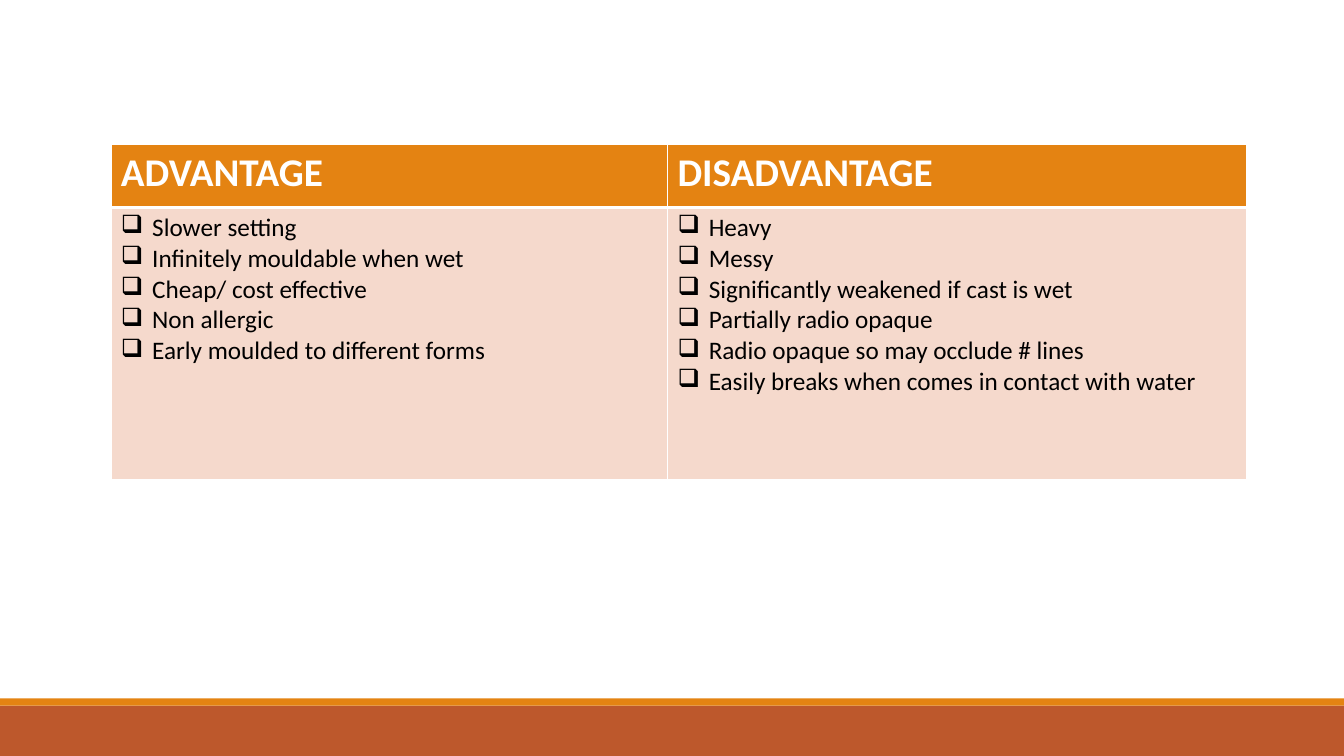
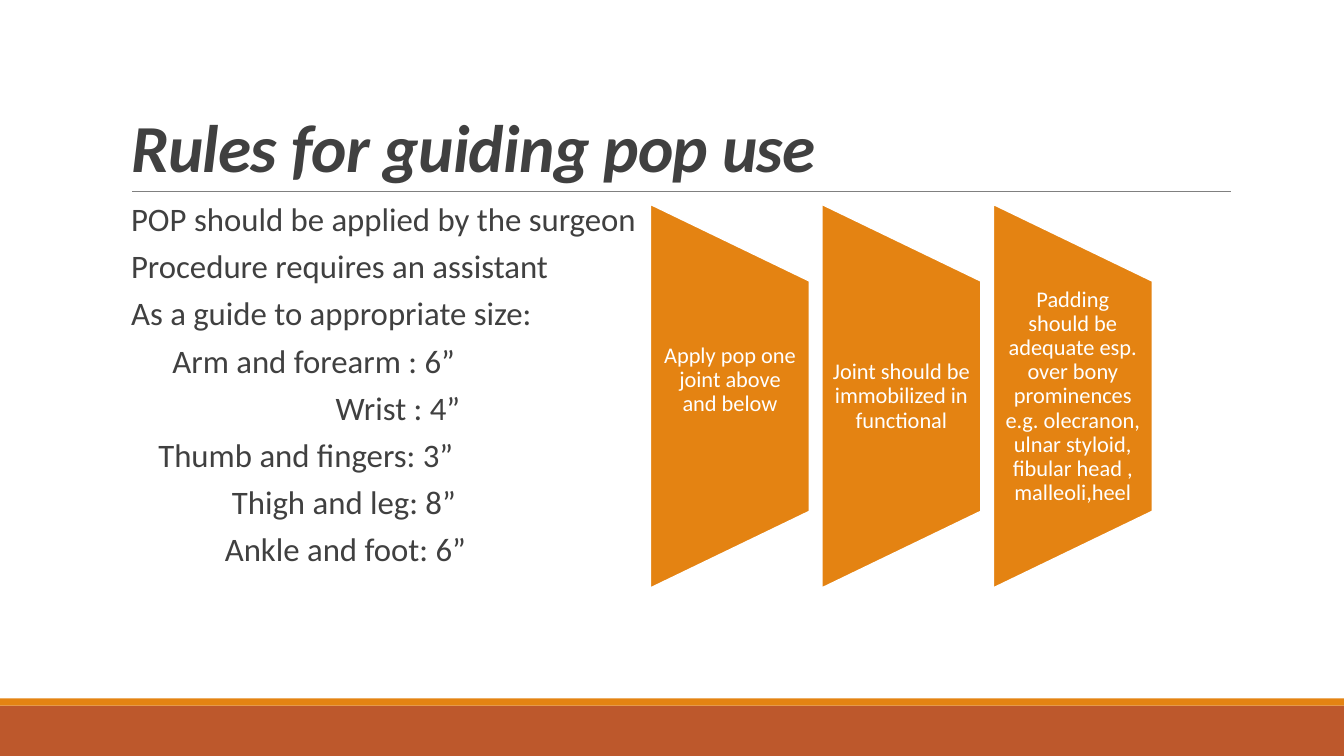
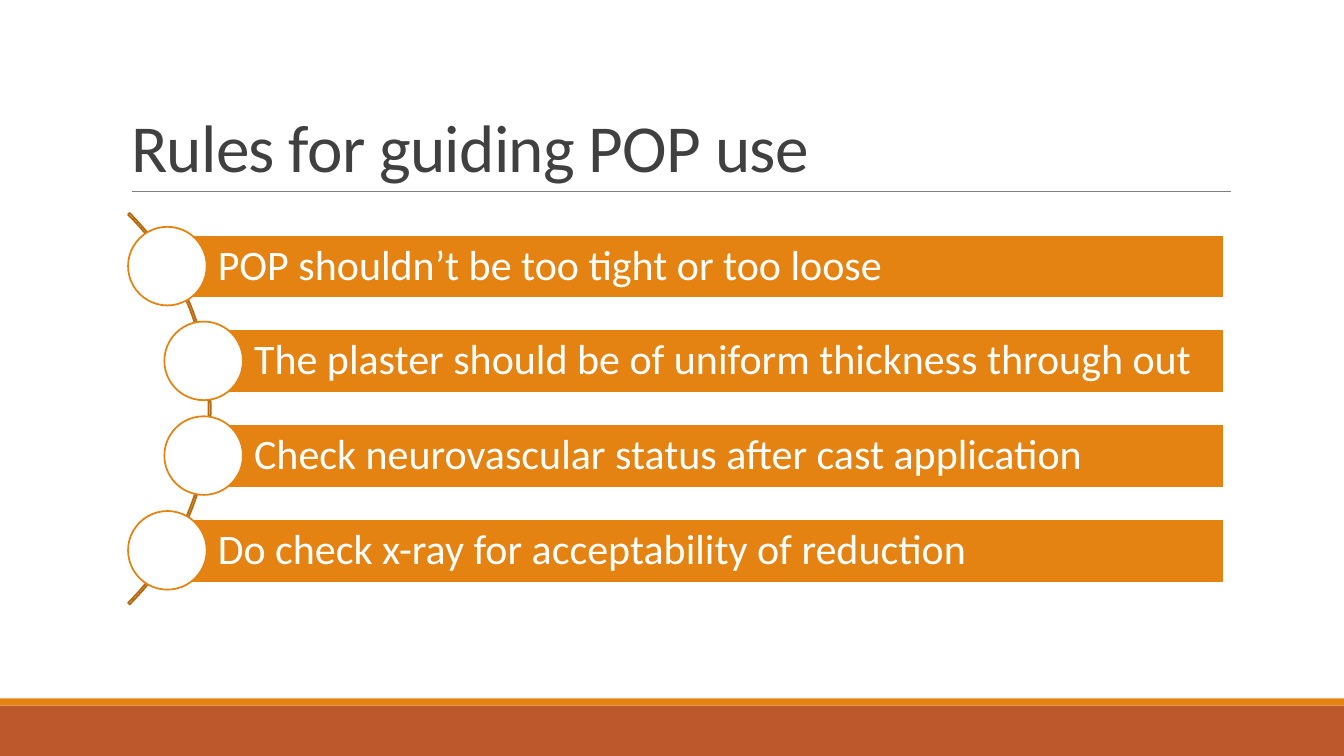
from dataclasses import dataclass

from lxml import etree
from pptx import Presentation
from pptx import util as u
from pptx.dml.color import RGBColor
from pptx.enum import shapes, text
from pptx.oxml.ns import qn


@dataclass(frozen=True)
class Theme:
    """Hold the colours and type sizes of the deck."""
    font: str = "Calibri"
    rust: str = "BD582C"
    amber: str = "E48312"
    brown: str = "B7690E"
    blush: str = "F5D9CC"
    white: str = "FFFFFF"
    black: str = "000000"
    ink: str = "404040"
    grey: str = "808080"
    title: float = 48
    bar: float = 30
    head: float = 28
    body: float = 23.4
    cell: float = 18
    panel: float = 16
    edge: float = 1.25


T = Theme()
KIND = shapes.MSO_SHAPE
MID = text.MSO_ANCHOR.MIDDLE
LEFT, MIDDLE = text.PP_ALIGN.LEFT, text.PP_ALIGN.CENTER


def color(code):
    """Return a colour from its hex code."""
    return RGBColor.from_string(code)


def node(parent, tag, **attrs):
    """Append a drawing element and return it."""
    return etree.SubElement(parent, qn(tag), **attrs)


def place(item, box):
    """Move an item to left, top, width, height in inches."""
    item.left, item.top, item.width, item.height = map(u.Inches, box)


def inset(frame, left, top, right, bottom):
    """Set the margins of a text frame in inches."""
    frame.margin_left, frame.margin_top = u.Inches(left), u.Inches(top)
    frame.margin_right, frame.margin_bottom = u.Inches(right), u.Inches(bottom)


def write(frame, lines, size, ink, bold=False, italic=False, align=LEFT,
          gap=1.0, before=0, after=0, track=0, bullet="", indents=None, anchor=None):
    """Fill a text frame with one formatted paragraph per line."""
    frame.word_wrap = True
    if anchor is not None:
        frame.vertical_anchor = anchor
    for i, line in enumerate(lines):
        para = frame.add_paragraph() if i else frame.paragraphs[0]
        para.alignment, para.line_spacing = align, gap
        para.space_before, para.space_after = u.Pt(before), u.Pt(after)
        props = para._p.get_or_add_pPr()
        left = indents[i] if indents else 0
        props.set("marL", str(u.Inches(left)))
        props.set("indent", str(u.Inches(-left if bullet else 0)))
        if bullet:
            node(props, "a:buChar", char=bullet)
        else:
            node(props, "a:buNone")
        run = para.add_run()
        run.text = line
        font = run.font
        font.name, font.size = T.font, u.Pt(size)
        font.bold, font.italic = bold, italic
        font.color.rgb = color(ink)
        if track:
            run._r.get_or_add_rPr().set("spc", str(int(track * 100)))


def shape(slide, kind, box, fill=None, line=None):
    """Add a flat preset shape."""
    item = slide.shapes.add_shape(kind, *map(u.Inches, box))
    item.shadow.inherit = False
    if fill:
        item.fill.solid()
        item.fill.fore_color.rgb = color(fill)
    else:
        item.fill.background()
    if line:
        item.line.color.rgb = color(line)
        item.line.width = u.Pt(T.edge)
    else:
        item.line.fill.background()
    return item


def rule(slide, left, right, top):
    """Add a thin horizontal line."""
    ends = map(u.Inches, (left, top, right, top))
    item = slide.shapes.add_connector(shapes.MSO_CONNECTOR.STRAIGHT, *ends)
    item.line.color.rgb = color(T.grey)
    item.line.width = u.Pt(0.5)
    node(item.element.spPr, "a:effectLst")
    return item


def frame(deck, slide):
    """Draw the shared bands and rule and move them to the master."""
    parts = [
        shape(slide, KIND.RECTANGLE, (0, 7, 13.33, 0.5), T.rust),
        shape(slide, KIND.RECTANGLE, (0, 6.93, 13.33, 0.07), T.amber),
        rule(slide, 1.31, 12.21, 1.9),
    ]
    tree = deck.slide_master.shapes.element
    for i, part in enumerate(parts):
        part.element.xpath(".//p:cNvPr")[0].set("id", str(20 + i))
        tree.insert(2 + i, part.element)


def title(slide, words, **style):
    """Fill the title placeholder."""
    item = slide.shapes.title
    place(item, (1.2, 0.31, 11, 1.59))
    item.text_frame.auto_size = text.MSO_AUTO_SIZE.NONE
    write(item.text_frame, [words], T.title, T.ink, gap=0.85, track=-0.5,
          anchor=text.MSO_ANCHOR.BOTTOM, **style)


def border(cell, bottom):
    """Give a cell white borders with the given bottom width."""
    props = cell._tc.get_or_add_tcPr()
    for i, (side, width) in enumerate(zip("LRTB", (1, 1, 1, bottom))):
        line = etree.Element(qn(f"a:ln{side}"), w=str(u.Pt(width)))
        node(node(line, "a:solidFill"), "a:srgbClr", val=T.white)
        props.insert(i, line)


def grid(slide, heads, lists):
    """Add a table with a heading and a bullet list in each column."""
    box = map(u.Inches, (1.1, 1.43, 11.26, 3.33))
    table = slide.shapes.add_table(2, len(heads), *box).table
    table.first_row = table.horz_banding = False
    for row, tall in zip(table.rows, (0.63, 2.7)):
        row.height = u.Inches(tall)
    for i, wide in enumerate((5.52, 5.74)):
        table.columns[i].width = u.Inches(wide)
        top, low = table.cell(0, i), table.cell(1, i)
        for cell, fill, edge in ((top, T.amber, 3), (low, T.blush, 1)):
            cell.fill.solid()
            cell.fill.fore_color.rgb = color(fill)
            border(cell, edge)
        write(top.text_frame, [heads[i]], T.head, T.white, bold=True)
        write(low.text_frame, lists[i], T.cell, T.black, bullet="❑",
              indents=[0.31] * len(lists[i]))


def body(slide, lines):
    """Fill the body placeholder with pairs of text and indent."""
    item = slide.placeholders[1]
    place(item, (1.2, 2.03, 11, 4.4))
    item.text_frame.auto_size = text.MSO_AUTO_SIZE.NONE
    inset(item.text_frame, 0, 0.05, 0, 0.05)
    words, indents = zip(*lines)
    write(item.text_frame, words, T.body, T.ink, gap=0.7, before=12, after=2,
          indents=indents, anchor=text.MSO_ANCHOR.TOP)


def panel(slide, left, words, lift=0):
    """Add a sideways trapezoid with upright text."""
    wide, tall, mid = 1.58, 3.81, 3.93
    box = (left + (wide - tall) / 2, mid - wide / 2, tall, wide)
    item = shape(slide, KIND.FLOWCHART_MANUAL_OPERATION, box, T.amber, T.white)
    item.rotation = 270
    label = slide.shapes.add_textbox(*map(u.Inches, (left, 2.79, wide, 2.29)))
    inset(label.text_frame, 0.11, 0, 0.11, lift)
    write(label.text_frame, [words], T.panel, T.white, align=MIDDLE, gap=0.9, anchor=MID)


def bar(slide, left, top, words):
    """Add a text bar with a circle at its left end."""
    start = left + 0.39
    item = shape(slide, KIND.RECTANGLE, (start, top, 12.14 - start, 0.63), T.amber, T.white)
    inset(item.text_frame, 0.5, 0.08, 0.08, 0.08)
    write(item.text_frame, [words], T.bar, T.white, gap=0.9, anchor=MID)
    shape(slide, KIND.OVAL, (left, top - 0.08, 0.78, 0.78), T.white, T.amber)


def compare(deck):
    """Build the slide of advantages and disadvantages."""
    slide = deck.slides.add_slide(deck.slide_layouts[6])
    frame(deck, slide)
    grid(slide, ["ADVANTAGE", "DISADVANTAGE"], [
        ["Slower setting", "Infinitely mouldable when wet", "Cheap/ cost effective",
         "Non allergic", "Early moulded to different forms"],
        ["Heavy", "Messy", "Significantly weakened if cast is wet",
         "Partially radio opaque", "Radio opaque so may occlude # lines",
         "Easily breaks when comes in contact with water"],
    ])


def sizes(deck):
    """Build the slide of rules with sizes and panels."""
    slide = deck.slides.add_slide(deck.slide_layouts[1])
    title(slide, "Rules for guiding pop use", bold=True, italic=True)
    body(slide, [
        ("POP should be applied by the surgeon", 0.1),
        ("Procedure requires an assistant", 0.1),
        ("As a guide to appropriate size:", 0.1),
        ("Arm and forearm : 6”", 0.51),
        ("Wrist : 4”", 2.13),
        ("Thumb and fingers: 3”", 0.37),
        ("Thigh and leg: 8”", 1.1),
        ("Ankle and foot: 6”", 1.03),
    ])
    panels = [
        ("Apply pop one joint above and below", 0.32),
        ("Joint should be immobilized in functional", 0),
        ("Padding should be adequate esp. over bony prominences e.g. olecranon, "
         "ulnar styloid, fibular head , malleoli,heel", 0),
    ]
    for i, (words, lift) in enumerate(panels):
        panel(slide, 6.45 + 1.7 * i, words, lift)


def checks(deck):
    """Build the slide of rules along an arc."""
    slide = deck.slides.add_slide(deck.slide_layouts[5])
    title(slide, "Rules for guiding POP use")
    arc = shape(slide, KIND.BLOCK_ARC, (-3.4, 1.31, 5.49, 5.49), line=T.brown)
    for i, value in enumerate((189, 27, 0.004)):
        arc.adjustments[i] = value
    bars = [
        (1.27, "POP shouldn’t be too tight or too loose"),
        (1.63, "The plaster should be of uniform thickness through out"),
        (1.63, "Check neurovascular status after cast application"),
        (1.27, "Do check x-ray for acceptability of reduction"),
    ]
    for i, (left, words) in enumerate(bars):
        bar(slide, left, 2.33 + 0.94 * i, words)


def main():
    """Build and save the deck."""
    deck = Presentation()
    deck.slide_width, deck.slide_height = u.Inches(13.33), u.Inches(7.5)
    for build in (compare, sizes, checks):
        build(deck)
    deck.save("out.pptx")


if __name__ == "__main__":
    main()
